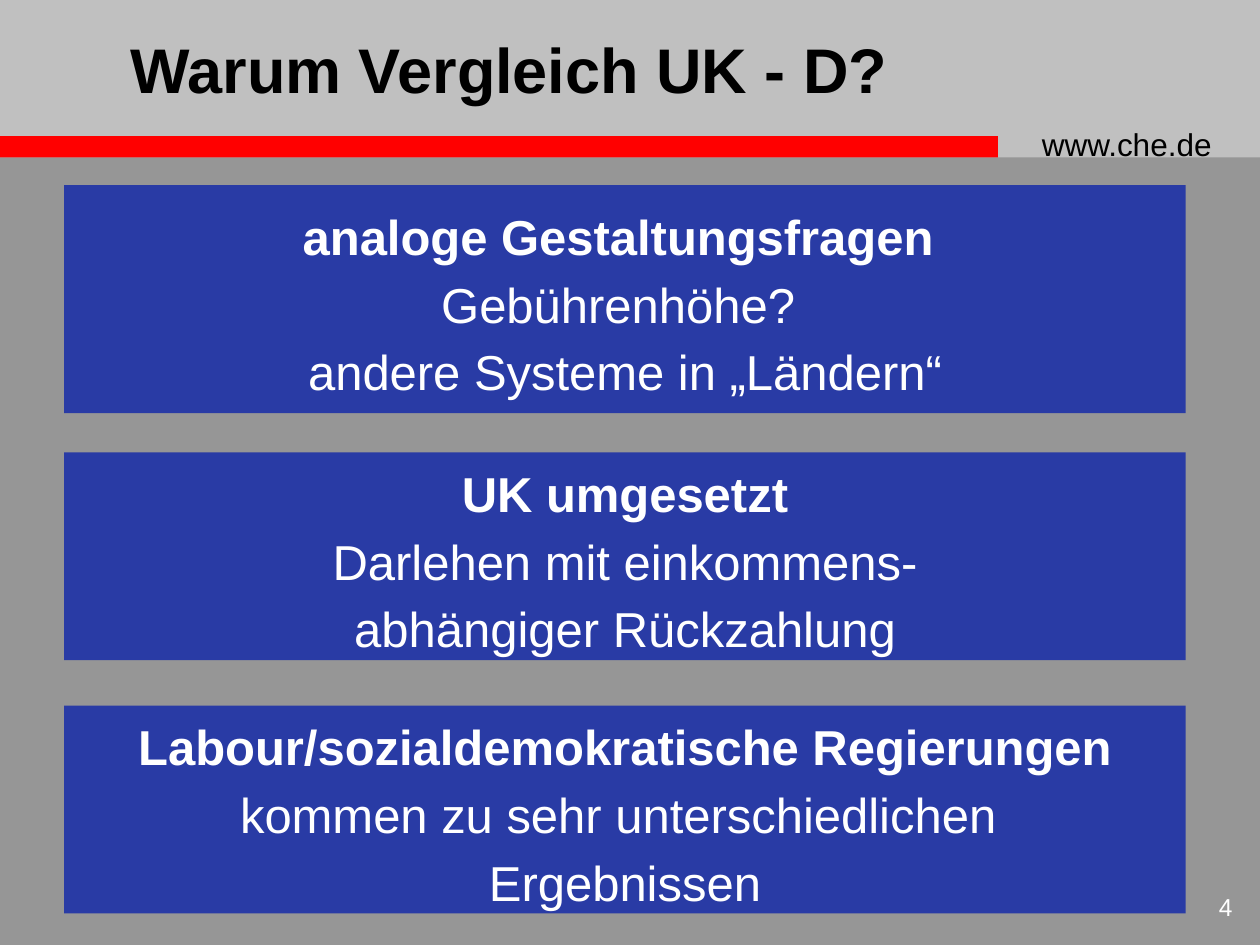
"""Build the slide comparing tuition fee systems in the UK and Germany."""
from dataclasses import dataclass

from pptx import Presentation
from pptx.dml.color import RGBColor
from pptx.enum.shapes import MSO_SHAPE
from pptx.enum.text import MSO_ANCHOR, PP_ALIGN
from pptx.util import Inches, Pt


@dataclass(frozen=True)
class Theme:
    font: str = "Arial"
    background: str = "969696"
    header: str = "C0C0C0"
    accent: str = "FF0000"
    panel: str = "293BA5"
    dark: str = "000000"
    light: str = "FFFFFF"
    title_size: int = 36
    panel_size: int = 28
    address_size: int = 18
    number_size: int = 14


THEME = Theme()

PANELS = [
    (1.47, 1.81, ["analoge Gestaltungsfragen ", "Gebührenhöhe? ",
                  "andere Systeme in „Ländern“"]),
    (3.59, 1.65, ["UK umgesetzt", "Darlehen mit einkommens-",
                  "abhängiger Rückzahlung"]),
    (5.6, 1.65, ["Labour/sozialdemokratische Regierungen",
                 "kommen zu sehr unterschiedlichen ", "Ergebnissen"]),
]


def add_run(p, text, size, color, bold=False):
    r = p.add_run()
    r.text = text
    r.font.name = THEME.font
    r.font.size = Pt(size)
    r.font.bold = bold
    r.font.color.rgb = RGBColor.from_string(color)


def add_bar(s, left, top, width, height, color):
    sp = s.shapes.add_shape(MSO_SHAPE.RECTANGLE, Inches(left), Inches(top),
                            Inches(width), Inches(height))
    sp.shadow.inherit = False
    sp.fill.solid()
    sp.fill.fore_color.rgb = RGBColor.from_string(color)
    sp.line.fill.background()
    return sp


def add_label(s, left, top, width, height, text, size, color,
              align=PP_ALIGN.LEFT, anchor=MSO_ANCHOR.TOP, bold=False):
    tf = s.shapes.add_textbox(Inches(left), Inches(top), Inches(width),
                              Inches(height)).text_frame
    tf.word_wrap = True
    tf.vertical_anchor = anchor
    p = tf.paragraphs[0]
    p.alignment = align
    add_run(p, text, size, color, bold)


def add_panel(s, top, height, lines):
    tf = add_bar(s, 0.51, top, 8.9, height, THEME.panel).text_frame
    tf.word_wrap = False
    tf.vertical_anchor = MSO_ANCHOR.MIDDLE
    for i, line in enumerate(lines):
        p = tf.add_paragraph() if i else tf.paragraphs[0]
        p.alignment = PP_ALIGN.CENTER
        p.line_spacing = 1.15
        add_run(p, line, THEME.panel_size, THEME.light, bold=i == 0)


def main():
    prs = Presentation()
    prs.slide_width, prs.slide_height = Inches(10), Inches(7.5)
    s = prs.slides.add_slide(prs.slide_layouts[6])
    s.background.fill.solid()
    s.background.fill.fore_color.rgb = RGBColor.from_string(THEME.background)

    add_bar(s, 0, 0, 10, 1.25, THEME.header)
    add_bar(s, -0.01, 1.08, 7.93, 0.17, THEME.accent)
    add_label(s, 8.17, 0.94, 1.75, 0.4, "www.che.de",
              THEME.address_size, THEME.dark)
    add_label(s, 9.3, 7.03, 0.58, 0.42, "4", THEME.number_size, THEME.light,
              align=PP_ALIGN.RIGHT)
    add_label(s, 0, 0, 8.08, 1.08, "Warum Vergleich UK - D?",
              THEME.title_size, THEME.dark, align=PP_ALIGN.CENTER,
              anchor=MSO_ANCHOR.MIDDLE, bold=True)
    for top, height, lines in PANELS:
        add_panel(s, top, height, lines)
    prs.save("out.pptx")


if __name__ == "__main__":
    main()
